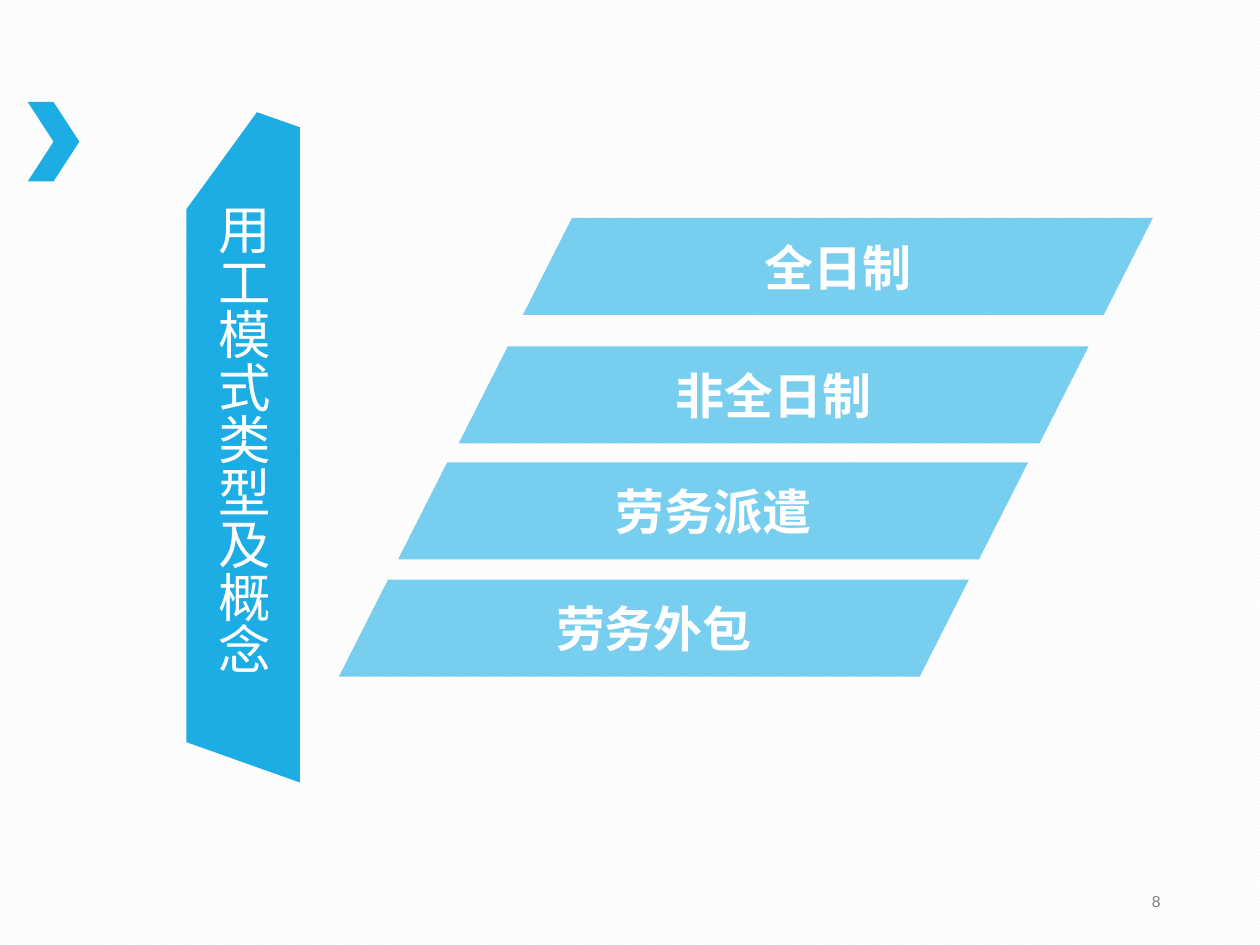
from pptx import Presentation
from pptx.dml.color import RGBColor
from pptx.enum.dml import MSO_PATTERN
from pptx.enum.shapes import MSO_SHAPE
from pptx.enum.text import MSO_ANCHOR, PP_ALIGN
from pptx.util import Inches, Pt

FONT = "Arial"
BLUE, LIGHT_BLUE, WHITE, GREY = "1CADE4", "77CEEF", "FFFFFF", "7F7F7F"
BAR_WIDTH, BAR_HEIGHT, BAR_SLANT = 5, 0.77, 0.39
BARS = [
    ("劳务外包", 2.69, 4.6),
    ("劳务派遣", 3.16, 3.67),
    ("非全日制", 3.64, 2.75),
    ("全日制", 4.15, 1.73),
]


def color(value):
    return RGBColor.from_string(value)


def paint(shape, fill):
    shape.shadow.inherit = False
    shape.fill.solid()
    shape.fill.fore_color.rgb = color(fill)
    shape.line.fill.background()


def write(shape, text, size, text_color, align, margins, bold=False):
    frame = shape.text_frame
    frame.text = text
    frame.word_wrap = True
    frame.vertical_anchor = MSO_ANCHOR.MIDDLE
    (frame.margin_left, frame.margin_top,
     frame.margin_right, frame.margin_bottom) = map(Inches, margins)
    para = frame.paragraphs[0]
    para.alignment = align
    font = para.runs[0].font
    font.name, font.size, font.bold = FONT, Pt(size), bold
    font.color.rgb = color(text_color)


def add_outline(page, points, fill):
    start, *rest = [(Inches(x), Inches(y)) for x, y in points]
    builder = page.shapes.build_freeform(*start)
    builder.add_line_segments(rest, close=True)
    shape = builder.convert_to_shape()
    paint(shape, fill)
    return shape


def add_background(page):
    fill = page.background.fill
    fill.patterned()
    fill.pattern = MSO_PATTERN.LIGHT_UPWARD_DIAGONAL
    fill.fore_color.rgb = color("F2F2F2")
    fill.back_color.rgb = color(WHITE)


def add_chevron(page, left, top, width, height):
    box = map(Inches, (left, top, width, height))
    paint(page.shapes.add_shape(MSO_SHAPE.CHEVRON, *box), BLUE)


def add_bar(page, text, left, top, width, height):
    right, bottom = left + width, top + height
    points = [(left + BAR_SLANT, top), (right, top),
              (right - BAR_SLANT, bottom), (left, bottom)]
    bar = add_outline(page, points, LIGHT_BLUE)
    write(bar, text, 28, WHITE, PP_ALIGN.CENTER, (0.18, 0.04, 0.18, 0.04), bold=True)


def add_banner(page, text, left, top, width, height):
    right, bottom = left + width, top + height
    points = [(left + 0.56, top), (right, top + 0.12), (right, bottom),
              (left, bottom - 0.32), (left, top + 0.77)]
    banner = add_outline(page, points, BLUE)
    write(banner, text, 30, WHITE, PP_ALIGN.CENTER, (0.07, 0.09, 0.07, 0.21))
    # Stack the characters from top to bottom, centred along the banner
    body = banner.element.txBody.bodyPr
    body.set("vert", "eaVert")
    body.set("anchorCtr", "1")


def add_page_number(page, number, left, top, width, height):
    box = page.shapes.add_textbox(*map(Inches, (left, top, width, height)))
    write(box, str(number), 9, GREY, PP_ALIGN.RIGHT, (0.1, 0.05, 0.1, 0.05))


def main():
    deck = Presentation()
    deck.slide_width, deck.slide_height = Inches(10), Inches(7.5)
    page = deck.slides.add_slide(deck.slide_layouts[6])
    add_background(page)
    add_chevron(page, 0.22, 0.81, 0.41, 0.63)
    # Employment types, from the bottom bar up
    for text, left, top in BARS:
        add_bar(page, text, left, top, BAR_WIDTH, BAR_HEIGHT)
    # Vertical heading
    add_banner(page, "用工模式类型及概念", 1.48, 0.89, 0.9, 5.32)
    add_page_number(page, 8, 7.06, 6.95, 2.25, 0.4)
    deck.save("out.pptx")


if __name__ == "__main__":
    main()
